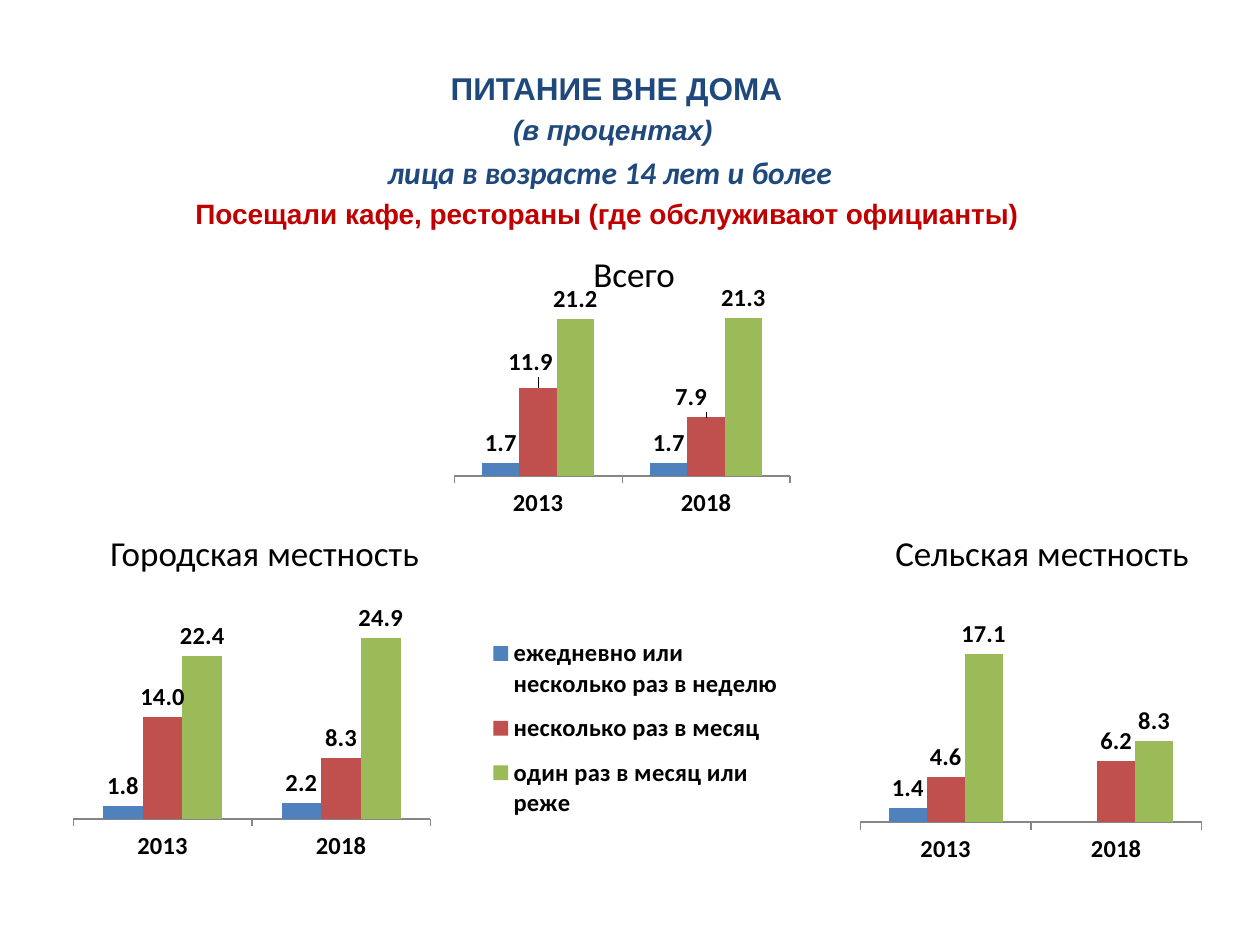
import pptx
import pptx.chart.data
import pptx.dml.color
import pptx.enum.chart
import pptx.enum.text
import pptx.oxml
import pptx.oxml.ns
import pptx.util

Pt = pptx.util.Pt
RGBColor = pptx.dml.color.RGBColor

COLORS = {
    "navy": "1F497D",
    "red": "C00000",
    "black": "000000",
    "axis": "868686",
}
SERIES_COLORS = ["4F81BD", "C0504D", "9BBB59"]
SERIES_NAMES = [
    "ежедневно или несколько раз в неделю",
    "несколько раз в месяц",
    "один раз в месяц или реже",
]


def add_text(slide, text, box, size, font="Calibri", color="black",
             bold=False, italic=False, centered=False):
    shape = slide.shapes.add_textbox(*[Pt(length) for length in box])
    frame = shape.text_frame
    frame.word_wrap = False
    frame.auto_size = pptx.enum.text.MSO_AUTO_SIZE.SHAPE_TO_FIT_TEXT
    paragraph = frame.paragraphs[0]
    if centered:
        paragraph.alignment = pptx.enum.text.PP_ALIGN.CENTER
    run = paragraph.add_run()
    run.text = text
    run.font.name = font
    run.font.size = Pt(size)
    run.font.bold = bold
    run.font.italic = italic
    run.font.color.rgb = RGBColor.from_string(COLORS[color])


def set_layout(parent, index, **settings):
    """Give a chart part a manual layout, as the child at the given index."""
    for old_layout in parent.findall(pptx.oxml.ns.qn("c:layout")):
        parent.remove(old_layout)
    items = "".join(f'<c:{tag} val="{value}"/>' for tag, value in settings.items())
    parent.insert(index, pptx.oxml.parse_xml(
        f'<c:layout {pptx.oxml.ns.nsdecls("c")}>'
        f"<c:manualLayout>{items}</c:manualLayout></c:layout>"))


presentation = pptx.Presentation()
presentation.slide_width = Pt(720)
presentation.slide_height = Pt(540)
slide = presentation.slides.add_slide(presentation.slide_layouts[6])

# Heading lines
add_text(slide, "ПИТАНИЕ ВНЕ ДОМА", (250.5, 36, 211, 29), 18, "Arial", "navy", bold=True)
add_text(slide, "(в процентах)", (285, 60.5, 130.5, 26.5), 16, "Arial", "navy",
         bold=True, italic=True, centered=True)
add_text(slide, "лица в возрасте 14 лет и более", (214.5, 84, 271.5, 29), 18,
         color="navy", bold=True, italic=True)
add_text(slide, "Посещали кафе, рестораны (где обслуживают официанты)",
         (104.5, 108.5, 491, 26.5), 16, "Arial", "red", bold=True)

# One chart per area; "shifts" moves labels of the middle series, by point
charts = [
    {"caption": "Всего", "caption_box": (332, 141, 61, 31.5),
     "box": (251.5, 157, 216.5, 154), "plot": (0.037, 0.059, 0.887, 0.688),
     "maximum": 25, "values": [(1.7, 1.7), (11.9, 7.9), (21.2, 21.3)],
     "shifts": [(-0.02, -0.02), (-0.04, 0)], "legend": False},
    {"caption": "Городская местность", "caption_box": (56, 300, 192, 31.5),
     "box": (36, 337.5, 425, 159), "plot": (0.014, 0.036, 0.48, 0.785),
     "maximum": 30, "values": [(1.8, 2.2), (14.0, 8.3), (22.4, 24.9)],
     "shifts": [], "legend": True},
    {"caption": "Сельская местность", "caption_box": (504.5, 300, 183.5, 31.5),
     "box": (489.5, 354, 197.5, 142.5), "plot": (0.011, 0.084, 0.989, 0.728),
     "maximum": 18.4, "values": [(1.4, None), (4.6, 6.2), (17.1, 8.3)],
     "shifts": [], "legend": False},
]

for area in charts:
    chart_data = pptx.chart.data.CategoryChartData(number_format="0.0")
    chart_data.categories = ["2013", "2018"]
    for name, values in zip(SERIES_NAMES, area["values"]):
        chart_data.add_series(name, values)
    chart = slide.shapes.add_chart(
        pptx.enum.chart.XL_CHART_TYPE.COLUMN_CLUSTERED,
        *[Pt(length) for length in area["box"]], chart_data).chart
    chart.has_title = False
    chart.font.name = "Calibri"
    chart.font.size = Pt(14)
    chart.font.bold = True
    chart.font.color.rgb = RGBColor.from_string(COLORS["black"])

    # Axes and plot area
    chart.value_axis.visible = False
    chart.value_axis.has_major_gridlines = False
    chart.value_axis.minimum_scale = 0
    chart.value_axis.maximum_scale = area["maximum"]
    category_axis = chart.category_axis
    category_axis.major_tick_mark = pptx.enum.chart.XL_TICK_MARK.OUTSIDE
    category_axis.format.line.color.rgb = RGBColor.from_string(COLORS["axis"])
    category_axis.tick_labels.font.size = Pt(14)
    category_axis.tick_labels.font.bold = True
    left, top, width, height = area["plot"]
    set_layout(chart.plots[0]._element.getparent(), 0, layoutTarget="inner",
               xMode="edge", yMode="edge", x=left, y=top, w=width, h=height)

    # Columns and their value labels
    plot = chart.plots[0]
    plot.gap_width = 150
    plot.overlap = 0
    plot.vary_by_categories = False
    for series, color in zip(plot.series, SERIES_COLORS):
        series.format.fill.solid()
        series.format.fill.fore_color.rgb = RGBColor.from_string(color)
        labels = series.data_labels
        labels.show_value = True
        labels.number_format = "0.0"
        labels.number_format_is_linked = False
        labels.position = pptx.enum.chart.XL_LABEL_POSITION.OUTSIDE_END
        labels.font.size = Pt(14)
        labels.font.bold = True

    middle_series = plot.series[1]
    for index, (shift_x, shift_y) in enumerate(area["shifts"]):
        label = middle_series.points[index].data_label
        label.position = pptx.enum.chart.XL_LABEL_POSITION.OUTSIDE_END
        label.font.size = Pt(14)
        label.font.bold = True
        element = middle_series._element.xpath("c:dLbls/c:dLbl")[index]
        set_layout(element, 1, x=shift_x, y=shift_y)

    # Shared legend, to the right of the columns
    chart.has_legend = area["legend"]
    if area["legend"]:
        legend = chart.legend
        legend.position = pptx.enum.chart.XL_LEGEND_POSITION.RIGHT
        legend.include_in_layout = False
        legend.font.size = Pt(14)
        legend.font.bold = True
        set_layout(legend._element, 1, xMode="edge", yMode="edge",
                   x=0.57, y=0.12, w=0.4, h=0.75)

    add_text(slide, area["caption"], area["caption_box"], 20)

presentation.save("out.pptx")
